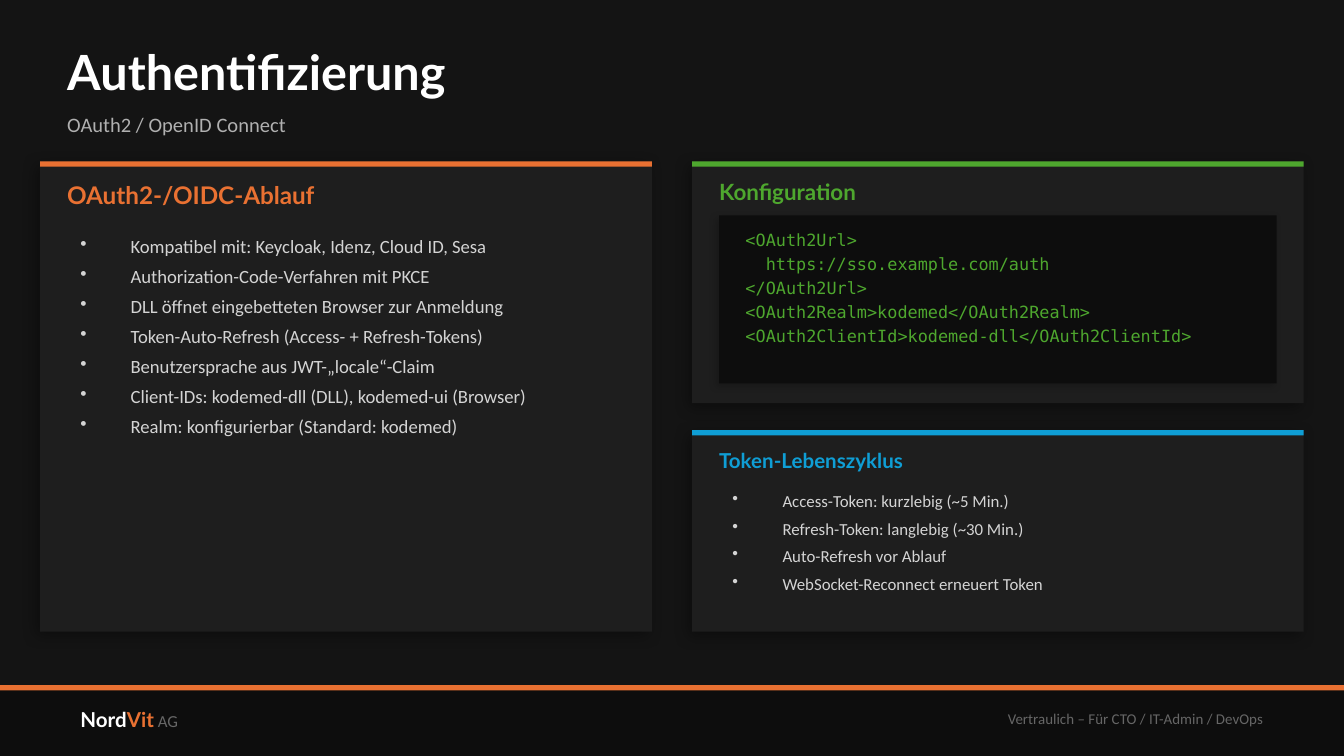
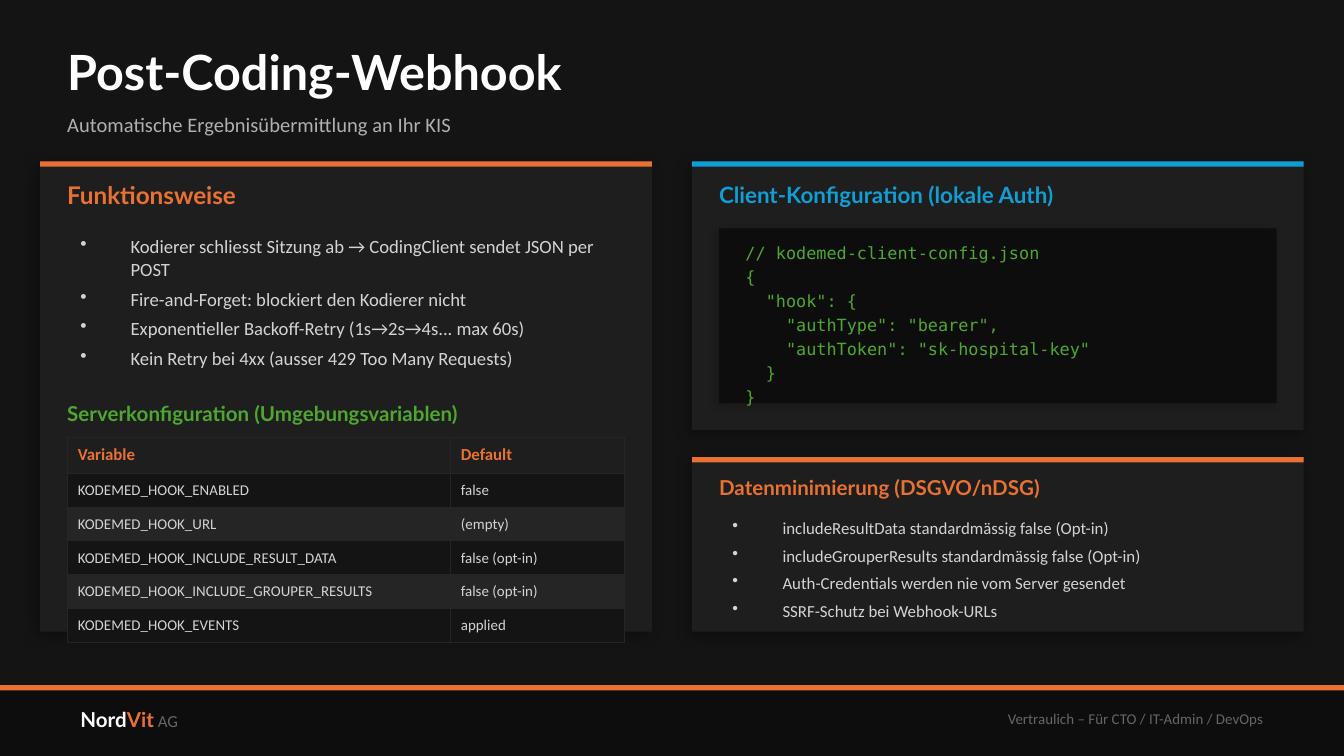
"""Builds two dark slides on authentication and the post-coding webhook."""
from lxml.etree import SubElement
from pptx import Presentation
from pptx.dml.color import RGBColor
from pptx.enum.shapes import MSO_SHAPE as Preset
from pptx.enum.text import MSO_ANCHOR as Anchor, MSO_AUTO_SIZE as AutoSize, PP_ALIGN as Align
from pptx.oxml.ns import qn
from pptx.util import Cm, Pt

ORANGE, GREEN, BLUE, WHITE = "E97132", "4EA72E", "0F9ED5", "FFFFFF"
PAGE_FILL, CARD_FILL, DEEP_FILL, STRIPE = "141414", "1E1E1E", "0D0D0D", "252525"
BODY, SUBTITLE, MUTED = "D4D4D4", "B0B0B0", "666666"
HEAD_FONT, BODY_FONT, CODE_FONT = "Lato", "Calibri", "DejaVu Sans Mono"

PAGE_W, PAGE_H = 25.4, 14.29
LEFT, RIGHT, CARD_W, PAD = 0.76, 13.08, 11.56, 0.51
INNER_W = CARD_W - 2 * PAD
TOP, BOTTOM, BAR = 3.05, 11.94, 0.1
FOOTER_TOP = 12.95
TITLE_X, TITLE_W = 1.27, 22.86
BULLET_INDENT = 0.95

BRAND = [("Nord", 11, HEAD_FONT, WHITE, True), ("Vit", 11, HEAD_FONT, ORANGE, True),
         (" AG", 9, BODY_FONT, MUTED, False)]
NOTICE = "Vertraulich – Für CTO / IT-Admin / DevOps"

SLIDES = [
    {
        "title": "Authentifizierung",
        "subtitle": "OAuth2 / OpenID Connect",
        "cards": [
            {"x": LEFT, "top": TOP, "bottom": BOTTOM, "color": ORANGE, "roomy": True,
             "heading": "OAuth2-/OIDC-Ablauf", "heading_size": 13,
             "kind": "bullets", "size": 10, "body_h": 7.11,
             "lines": ["Kompatibel mit: Keycloak, Idenz, Cloud ID, Sesa",
                       "Authorization-Code-Verfahren mit PKCE",
                       "DLL öffnet eingebetteten Browser zur Anmeldung",
                       "Token-Auto-Refresh (Access- + Refresh-Tokens)",
                       "Benutzersprache aus JWT-„locale“-Claim",
                       "Client-IDs: kodemed-dll (DLL), kodemed-ui (Browser)",
                       "Realm: konfigurierbar (Standard: kodemed)"]},
            {"x": RIGHT, "top": TOP, "bottom": 7.62, "color": GREEN, "roomy": False,
             "heading": "Konfiguration", "heading_size": 12,
             "kind": "code", "size": 9, "body_h": 3.18,
             "lines": ["<OAuth2Url>",
                       "  https://sso.example.com/auth",
                       "</OAuth2Url>",
                       "<OAuth2Realm>kodemed</OAuth2Realm>",
                       "<OAuth2ClientId>kodemed-dll</OAuth2ClientId>"]},
            {"x": RIGHT, "top": 8.13, "bottom": BOTTOM, "color": BLUE, "roomy": False,
             "heading": "Token-Lebenszyklus", "heading_size": 11,
             "kind": "bullets", "size": 9, "body_h": 2.54,
             "lines": ["Access-Token: kurzlebig (~5 Min.)",
                       "Refresh-Token: langlebig (~30 Min.)",
                       "Auto-Refresh vor Ablauf",
                       "WebSocket-Reconnect erneuert Token"]},
        ],
    },
    {
        "title": "Post-Coding-Webhook",
        "subtitle": "Automatische Ergebnisübermittlung an Ihr KIS",
        "cards": [
            {"x": LEFT, "top": TOP, "bottom": BOTTOM, "color": ORANGE, "roomy": True,
             "heading": "Funktionsweise", "heading_size": 13,
             "kind": "bullets", "size": 10, "body_h": 3.05,
             "lines": ["Kodierer schliesst Sitzung ab → CodingClient sendet JSON per POST",
                       "Fire-and-Forget: blockiert den Kodierer nicht",
                       "Exponentieller Backoff-Retry (1s→2s→4s... max 60s)",
                       "Kein Retry bei 4xx (ausser 429 Too Many Requests)"]},
            {"x": RIGHT, "top": TOP, "bottom": 8.13, "color": BLUE, "roomy": True,
             "heading": "Client-Konfiguration (lokale Auth)", "heading_size": 12,
             "kind": "code", "size": 9, "body_h": 3.3,
             "lines": ["// kodemed-client-config.json",
                       "{",
                       '  "hook": {',
                       '    "authType": "bearer",',
                       '    "authToken": "sk-hospital-key"',
                       "  }",
                       "}"]},
            {"x": RIGHT, "top": 8.64, "bottom": BOTTOM, "color": ORANGE, "roomy": False,
             "heading": "Datenminimierung (DSGVO/nDSG)", "heading_size": 11,
             "kind": "bullets", "size": 9, "body_h": 2.03,
             "lines": ["includeResultData standardmässig false (Opt-in)",
                       "includeGrouperResults standardmässig false (Opt-in)",
                       "Auth-Credentials werden nie vom Server gesendet",
                       "SSRF-Schutz bei Webhook-URLs"]},
        ],
        "table": {
            "heading": "Serverkonfiguration (Umgebungsvariablen)", "heading_top": 7.49,
            "top": 8.26, "height": 2.54, "widths": [7.24, 3.3],
            "rows": [("Variable", "Default"),
                     ("KODEMED_HOOK_ENABLED", "false"),
                     ("KODEMED_HOOK_URL", "(empty)"),
                     ("KODEMED_HOOK_INCLUDE_RESULT_DATA", "false (opt-in)"),
                     ("KODEMED_HOOK_INCLUDE_GROUPER_RESULTS", "false (opt-in)"),
                     ("KODEMED_HOOK_EVENTS", "applied")],
        },
    },
]


def rgb(value):
    return RGBColor.from_string(value)


def style(span, size, font, color, bold=False):
    span.font.size, span.font.name, span.font.bold = Pt(size), font, bold
    span.font.color.rgb = rgb(color)


def add_rect(page, x, y, w, h, color, shadow=None):
    """Adds a plain rectangle; shadow is (opacity %, blur pt, distance pt)."""
    rect = page.shapes.add_shape(Preset.RECTANGLE, Cm(x), Cm(y), Cm(w), Cm(h))
    rect.fill.solid()
    rect.fill.fore_color.rgb = rgb(color)
    rect.line.fill.background()
    rect.shadow.inherit = False
    if shadow:
        opacity, blur, distance = shadow
        effects = rect._element.spPr.find(qn("a:effectLst"))
        outer = SubElement(effects, qn("a:outerShdw"), blurRad=str(Pt(blur)), dist=str(Pt(distance)),
                           dir=str(135 * 60000), algn="bl", rotWithShape="0")
        tint = SubElement(outer, qn("a:srgbClr"), val="000000")
        SubElement(tint, qn("a:alpha"), val=str(opacity * 1000))


def add_box(page, x, y, w, h, anchor=Anchor.TOP):
    box = page.shapes.add_textbox(Cm(x), Cm(y), Cm(w), Cm(h))
    box.text_frame.word_wrap = True
    box.text_frame.vertical_anchor = anchor
    return box.text_frame


def clear_margins(frame):
    frame.margin_left = frame.margin_right = frame.margin_top = frame.margin_bottom = 0


def add_label(page, x, y, w, h, text, size, font, color, bold=False):
    """Adds one line of text in a box without margins."""
    frame = add_box(page, x, y, w, h, Anchor.MIDDLE)
    clear_margins(frame)
    frame.text = text
    style(frame.paragraphs[0].runs[0], size, font, color, bold)


def add_lines(frame, lines, size, font, color, gap, bulleted=False):
    for index, line in enumerate(lines):
        para = frame.paragraphs[0] if index == 0 else frame.add_paragraph()
        para.text = line
        para.space_after = Pt(gap)
        if bulleted:
            props = para._p.get_or_add_pPr()
            props.set("marL", str(Cm(BULLET_INDENT)))
            props.set("indent", str(-Cm(BULLET_INDENT)))
            SubElement(props, qn("a:buChar"), char="•")
        style(para.runs[0], size, font, color)


def add_title(page, title, subtitle):
    holder = page.shapes.title
    holder.left, holder.top, holder.width, holder.height = Cm(TITLE_X), Cm(0.64), Cm(TITLE_W), Cm(1.4)
    frame = holder.text_frame
    frame.text = title
    frame.auto_size = AutoSize.NONE
    frame.vertical_anchor = Anchor.MIDDLE
    clear_margins(frame)
    frame.paragraphs[0].alignment = Align.LEFT
    style(frame.paragraphs[0].runs[0], 26, HEAD_FONT, WHITE, True)
    add_label(page, TITLE_X, 1.9, TITLE_W, 0.89, subtitle, 11, BODY_FONT, SUBTITLE)


def add_footer(page):
    add_rect(page, 0, FOOTER_TOP, PAGE_W, PAGE_H - FOOTER_TOP, DEEP_FILL)
    add_rect(page, 0, FOOTER_TOP, PAGE_W, BAR, ORANGE)
    brand = add_box(page, TITLE_X, 13.08, 7.62, 1.02, Anchor.MIDDLE).paragraphs[0]
    for text, *look in BRAND:
        span = brand.add_run()
        span.text = text
        style(span, *look)
    notice = add_box(page, 13.97, 13.08, 10.16, 1.02, Anchor.MIDDLE).paragraphs[0]
    notice.text = NOTICE
    notice.alignment = Align.RIGHT
    style(notice.runs[0], 8, BODY_FONT, MUTED)


def add_card(page, card):
    """Adds a panel with its coloured bar, heading and bullets or code."""
    x, top = card["x"], card["top"]
    inner_x, height = x + PAD, card["body_h"]
    heading_h, body_offset = (0.76, 1.27) if card["roomy"] else (0.64, 1.02)
    body_top = top + body_offset
    add_rect(page, x, top, CARD_W, card["bottom"] - top, CARD_FILL, (35, 8, 3))
    add_rect(page, x, top, CARD_W, BAR, card["color"])
    add_label(page, inner_x, top + 0.25, INNER_W, heading_h, card["heading"],
              card["heading_size"], HEAD_FONT, card["color"], True)
    if card["kind"] == "code":
        add_rect(page, inner_x, body_top, INNER_W, height, DEEP_FILL, (20, 4, 2))
        frame = add_box(page, inner_x + 0.25, body_top + 0.15, INNER_W - 0.5, height - 0.3)
        add_lines(frame, card["lines"], card["size"], CODE_FONT, GREEN, 2)
    else:
        frame = add_box(page, inner_x, body_top, INNER_W, height)
        add_lines(frame, card["lines"], card["size"], BODY_FONT, BODY, 4, True)


def add_borders(cell):
    props = cell._tc.get_or_add_tcPr()
    for side in ("lnL", "lnR", "lnT", "lnB"):
        line = SubElement(props, qn(f"a:{side}"), w=str(Pt(0.5)))
        SubElement(SubElement(line, qn("a:solidFill")), qn("a:srgbClr"), val=STRIPE)


def add_variables(page, data):
    """Adds the table of environment variables with its heading."""
    x, rows, widths = LEFT + PAD, data["rows"], data["widths"]
    add_label(page, x, data["heading_top"], INNER_W, 0.64, data["heading"], 11, HEAD_FONT, GREEN, True)
    table = page.shapes.add_table(len(rows), len(widths), Cm(x), Cm(data["top"]),
                                  Cm(INNER_W), Cm(data["height"])).table
    table.horz_banding = False
    for column, width in zip(table.columns, widths):
        column.width = Cm(width)
    for r, row in enumerate(rows):
        fill = CARD_FILL if r == 0 else (STRIPE, PAGE_FILL)[r % 2]
        look = (9, BODY_FONT, ORANGE, True) if r == 0 else (8, BODY_FONT, BODY)
        for c, text in enumerate(row):
            cell = table.cell(r, c)
            add_borders(cell)
            cell.fill.solid()
            cell.fill.fore_color.rgb = rgb(fill)
            cell.vertical_anchor = Anchor.MIDDLE
            cell.margin_left = cell.margin_right = Cm(0.2)
            cell.margin_top = cell.margin_bottom = Cm(0.15)
            cell.text_frame.text = text
            style(cell.text_frame.paragraphs[0].runs[0], *look)


def main():
    deck = Presentation()
    deck.slide_width, deck.slide_height = Cm(PAGE_W), Cm(PAGE_H)
    for content in SLIDES:
        page = deck.slides.add_slide(deck.slide_layouts[5])
        page.background.fill.solid()
        page.background.fill.fore_color.rgb = rgb(PAGE_FILL)
        add_footer(page)
        add_title(page, content["title"], content["subtitle"])
        for card in content["cards"]:
            add_card(page, card)
        if "table" in content:
            add_variables(page, content["table"])
    deck.save("out.pptx")


if __name__ == "__main__":
    main()
